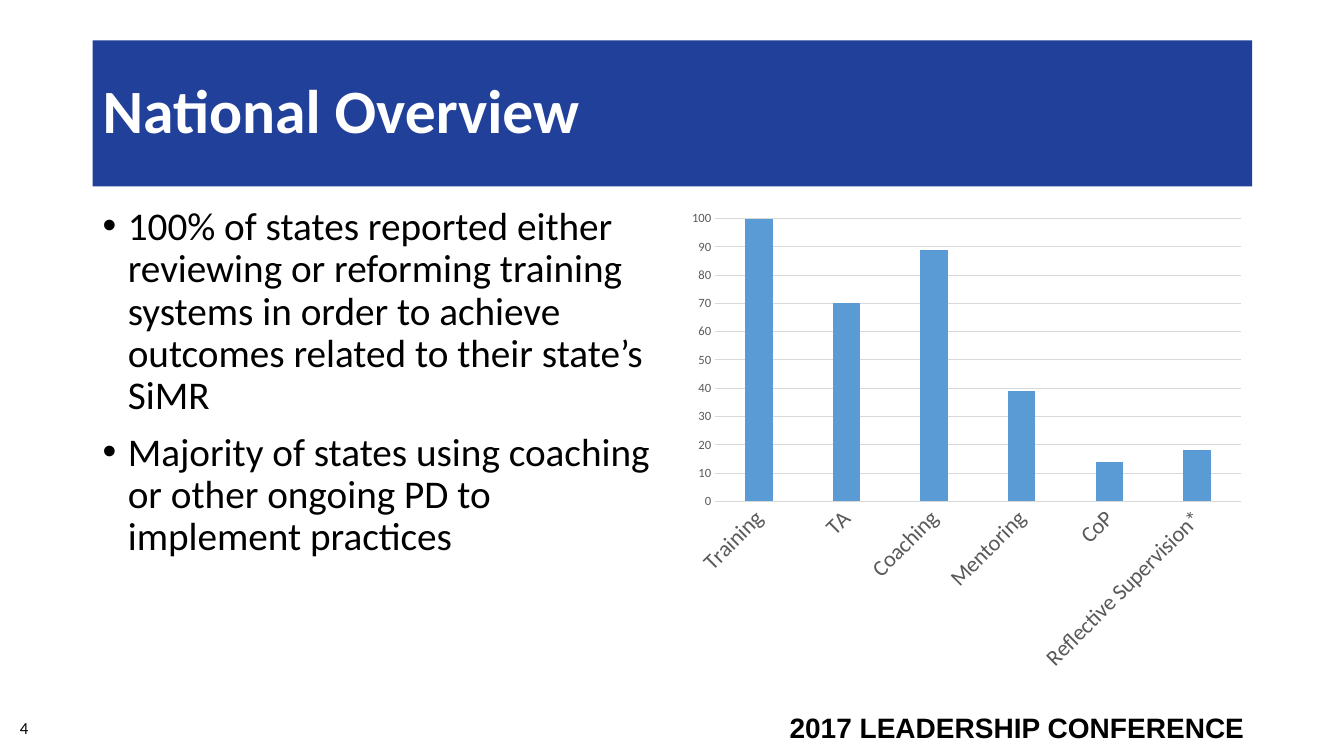
import pptx
import pptx.util
import pptx.dml.color
import pptx.chart.data
import pptx.enum.chart
import pptx.enum.shapes
import pptx.enum.text
from lxml import etree

Inches, Pt = pptx.util.Inches, pptx.util.Pt
ANCHOR, ALIGN = pptx.enum.text.MSO_ANCHOR, pptx.enum.text.PP_ALIGN

# Content
TITLE = "National Overview"
BULLETS = [
    "100% of states reported either reviewing or reforming training systems "
    "in order to achieve outcomes related to their state’s SiMR",
    "Majority of states using coaching or other ongoing PD to implement practices",
]
REPORTED = {"Training": 100, "TA": 70, "Coaching": 89, "Mentoring": 39,
            "CoP": 14, "Reflective Supervision*": 18}
FOOTER = "2017 LEADERSHIP CONFERENCE"
PAGE = "4"

# Layout and colours
LEFT, TOP, WIDTH = 0.92, 2, 11.5
COL_W, COL_H = 5.67, 4.76
BLACK, WHITE, NAVY, BAR, GREY, GRID = (
    "000000", "FFFFFF", "21409A", "5B9BD5", "595959", "D9D9D9")


def color(hex_string):
    return pptx.dml.color.RGBColor.from_string(hex_string)


def set_font(font, size, hex_string, name="Calibri", bold=False):
    font.size, font.name, font.bold = Pt(size), name, bold
    font.color.rgb = color(hex_string)


def add_run(p, text, *style, **options):
    r = p.add_run()
    r.text = text
    set_font(r.font, *style, **options)


def add_text_box(x, y, w, h, anchor=ANCHOR.TOP):
    tf = s.shapes.add_textbox(Inches(x), Inches(y), Inches(w), Inches(h)).text_frame
    tf.word_wrap = True
    tf.vertical_anchor = anchor
    return tf


def add_bullet(p):
    pPr = p._p.get_or_add_pPr()
    pPr.set("marL", str(Inches(0.25)))
    pPr.set("indent", str(-Inches(0.25)))
    for tag, key, value in (("buFont", "typeface", "Arial"), ("buChar", "char", "•")):
        etree.SubElement(pPr, pptx.oxml.ns.qn("a:" + tag)).set(key, value)


prs = pptx.Presentation()
prs.slide_width, prs.slide_height = Inches(13.33), Inches(7.5)
s = prs.slides.add_slide(prs.slide_layouts[6])

# Footer and page number
p = add_text_box(7.52, 7, 4.92, 0.42).paragraphs[0]
p.alignment = ALIGN.RIGHT
add_run(p, FOOTER, 20, BLACK, name="Arial", bold=True)
p = add_text_box(0.1, 7.02, 3, 0.4, ANCHOR.MIDDLE).paragraphs[0]
add_run(p, PAGE, 12, BLACK)

# Title band
band = s.shapes.add_shape(pptx.enum.shapes.MSO_SHAPE.RECTANGLE,
                          Inches(LEFT), Inches(0.4), Inches(WIDTH), Inches(1.45))
band.shadow.inherit = False
band.fill.solid()
band.fill.fore_color.rgb = color(NAVY)
band.line.fill.background()
band.text_frame.word_wrap = True
band.text_frame.vertical_anchor = ANCHOR.MIDDLE
p = band.text_frame.paragraphs[0]
p.alignment, p.line_spacing = ALIGN.LEFT, 0.9
add_run(p, TITLE, 44, WHITE, bold=True)

# Bullets in the left column
tf = add_text_box(LEFT, TOP, COL_W, COL_H)
for i, text in enumerate(BULLETS):
    p = tf.add_paragraph() if i else tf.paragraphs[0]
    add_bullet(p)
    p.line_spacing = 0.9
    p.space_before = Pt(10 if i else 0)
    add_run(p, text, 28, BLACK)

# Chart in the right column
data = pptx.chart.data.CategoryChartData()
data.categories = list(REPORTED)
data.add_series("Series 1", list(REPORTED.values()))
chart = s.shapes.add_chart(
    pptx.enum.chart.XL_CHART_TYPE.COLUMN_CLUSTERED,
    Inches(LEFT + WIDTH - COL_W), Inches(TOP), Inches(COL_W), Inches(COL_H), data).chart
chart.has_legend = chart.has_title = False
set_font(chart.font, 10, BLACK)
plot = chart.plots[0]
plot.vary_by_categories = False
plot.gap_width, plot.overlap = 219, -27
fill = plot.series[0].format.fill
fill.solid()
fill.fore_color.rgb = color(BAR)

# Axes, with slanted category labels
cat, val = chart.category_axis, chart.value_axis
for axis, size in ((cat, 16), (val, 9)):
    axis.major_tick_mark = axis.minor_tick_mark = pptx.enum.chart.XL_TICK_MARK.NONE
    set_font(axis.tick_labels.font, size, GREY)
cat._element.txPr.find(pptx.oxml.ns.qn("a:bodyPr")).set("rot", str(-45 * 60000))
val.minimum_scale, val.maximum_scale, val.major_unit = 0, 100, 10
val.format.line.fill.background()
for line in (cat.format.line, val.major_gridlines.format.line):
    line.color.rgb = color(GRID)
    line.width = Pt(0.75)

prs.save("out.pptx")
